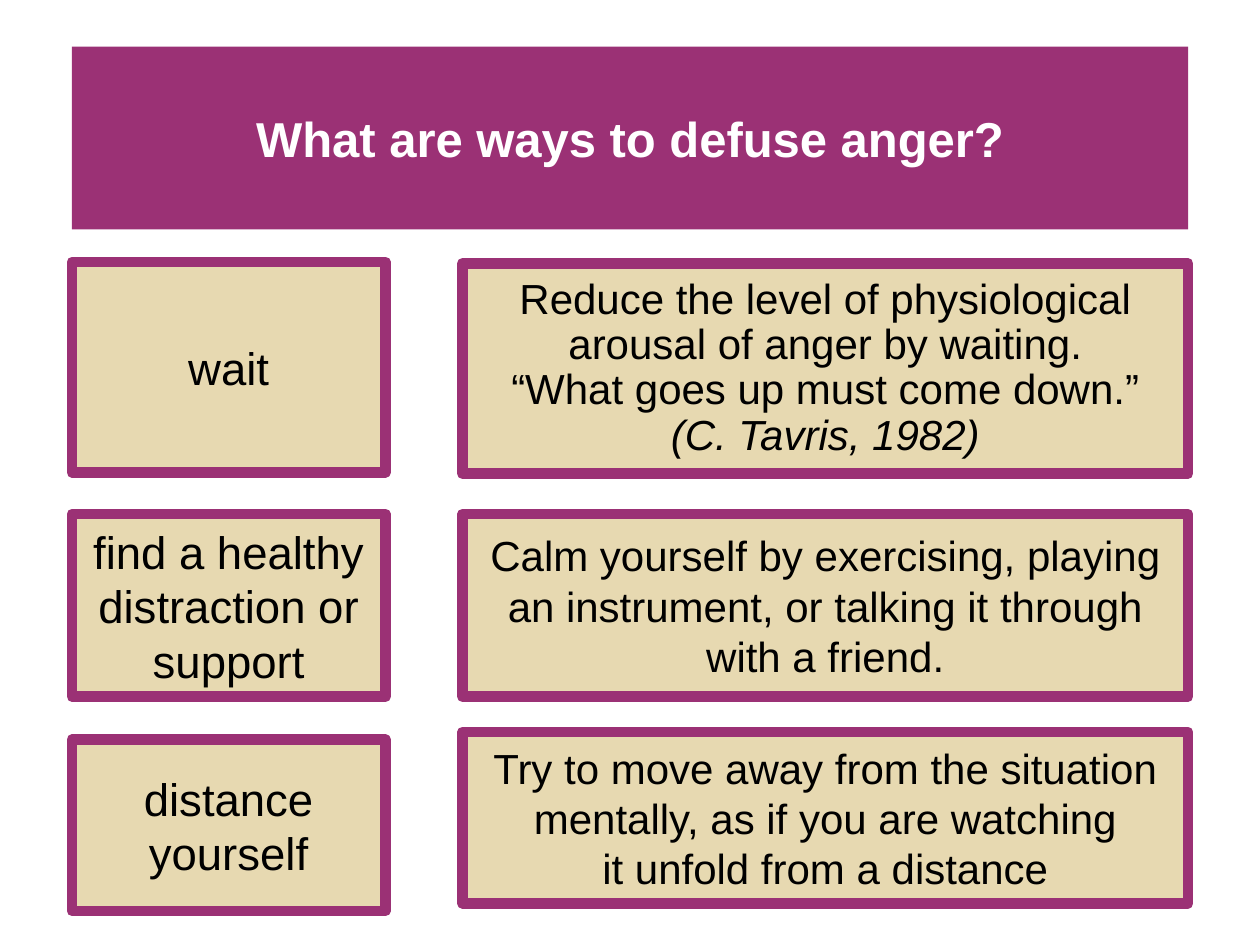
from pptx import Presentation
from pptx.dml.color import RGBColor
from pptx.enum.shapes import MSO_SHAPE as Shape
from pptx.enum.text import MSO_ANCHOR as Anchor, PP_ALIGN as Align
from pptx.util import Inches, Pt

# Content: (way, lines of advice)
TITLE = "What are ways to defuse anger?"
WAYS = [
    ("wait", ["Reduce the level of physiological arousal of anger by waiting.",
              "“What goes up must come down.”",
              "(C. Tavris, 1982)"]),
    ("find a healthy distraction or support",
     ["Calm yourself by exercising, playing an instrument, "
      "or talking it through with a friend."]),
    ("distance yourself",
     ["Try to move away from the situation mentally, as if you are watching",
      "it unfold from a distance"]),
]

# Grid in inches: (left, width) per column, (way top, advice top, height) per row
LEFT, RIGHT = (0.57, 2.49), (3.67, 5.76)
ROWS = [(2.08, 2.09, 1.67), (4.08, 4.08, 1.45), (5.87, 5.81, 1.36)]
PLUM, SAND, WHITE, BLACK = "9B3175", "E7D9B1", "FFFFFF", "000000"


def color(code):
    return RGBColor.from_string(code)


def paint(shape, code):
    shape.fill.solid()
    shape.fill.fore_color.rgb = color(code)


def write(shape, lines, size, code, bold=False):
    frame = shape.text_frame
    frame.text = "\n".join(lines)
    frame.word_wrap = True
    frame.vertical_anchor = Anchor.MIDDLE
    for para in frame.paragraphs:
        para.alignment = Align.CENTER
        for run in para.runs:
            font = run.font
            font.name, font.size, font.bold = "Arial", Pt(size), bold
            font.color.rgb = color(code)
    return frame.paragraphs


def add_box(slide, col, top, height, lines, size):
    left, width = col
    box = slide.shapes.add_shape(
        Shape.RECTANGLE, *map(Inches, (left, top, width, height)))
    box.shadow.inherit = False
    paint(box, SAND)
    box.line.color.rgb = color(PLUM)
    box.line.width = Pt(6)
    return write(box, lines, size, BLACK)


def main():
    deck = Presentation()
    deck.slide_width, deck.slide_height = Inches(10), Inches(7.5)
    slide = deck.slides.add_slide(deck.slide_layouts[5])

    # Title banner
    title = slide.shapes.title
    title.left, title.top = Inches(LEFT[0]), Inches(0.37)
    title.width, title.height = Inches(8.86), Inches(1.45)
    paint(title, PLUM)
    write(title, [TITLE], 28, WHITE, bold=True)

    # One row per way: its name, then the advice
    advice = []
    for (way, lines), (top, side, height) in zip(WAYS, ROWS):
        add_box(slide, LEFT, top, height, [way], 26)
        advice.append(add_box(slide, RIGHT, side, height, lines, 24))

    # The quotation is set tighter, with its source in italics
    quote = advice[0]
    for para in quote:
        para.line_spacing = 0.9
    quote[-1].runs[0].font.italic = True

    deck.save("out.pptx")


if __name__ == "__main__":
    main()
